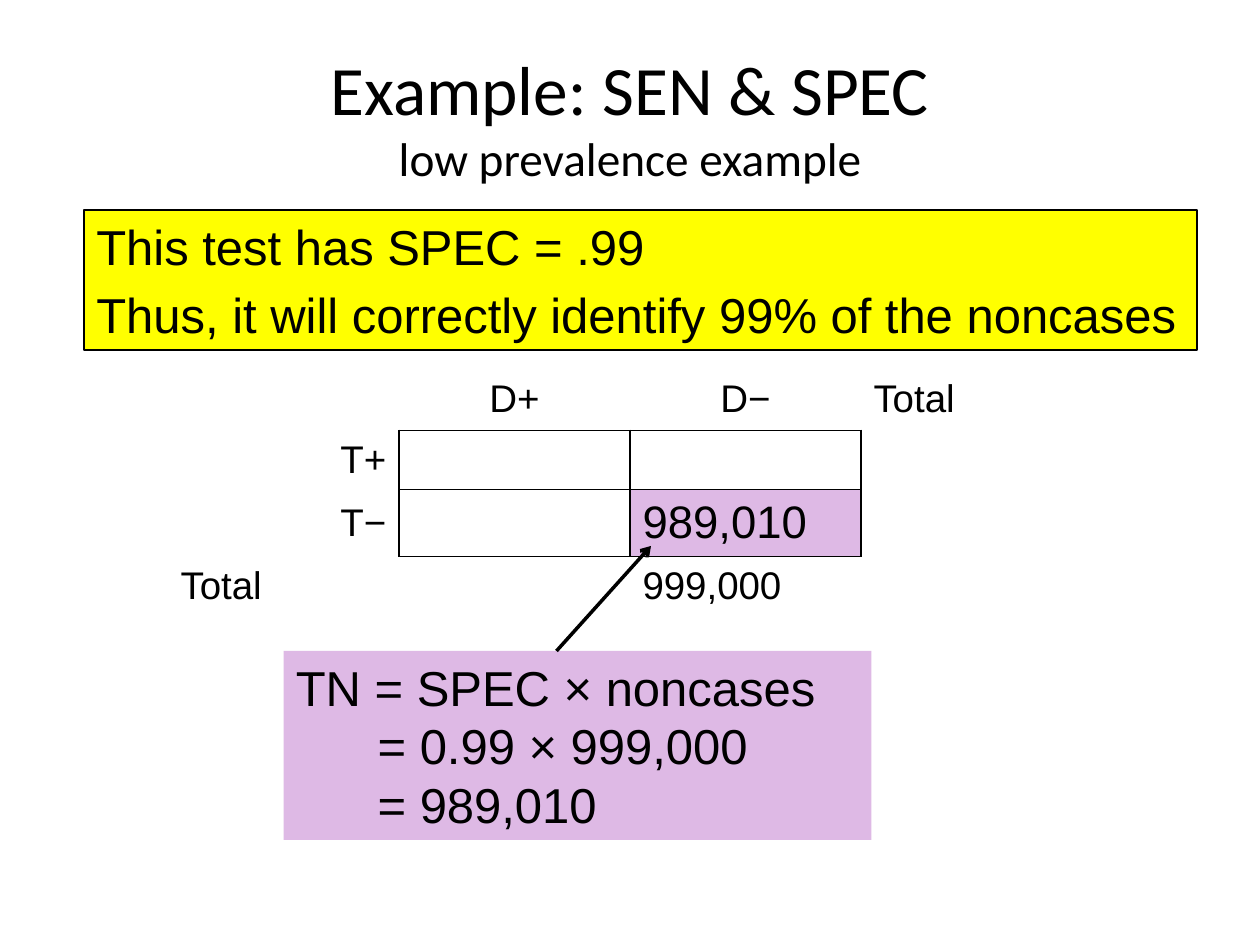
import pptx
import pptx.util
import pptx.dml.color
import pptx.enum.shapes
import pptx.enum.text
import pptx.oxml
import pptx.oxml.ns

Pt = pptx.util.Pt
RGBColor = pptx.dml.color.RGBColor
ALIGN = pptx.enum.text.PP_ALIGN
ANCHOR = pptx.enum.text.MSO_ANCHOR
SHAPE = pptx.enum.shapes.MSO_SHAPE
qn = pptx.oxml.ns.qn

BLACK = RGBColor(0, 0, 0)
WHITE = RGBColor(255, 255, 255)
LILAC = RGBColor(0xDE, 0xB9, 0xE5)
YELLOW = RGBColor(255, 255, 0)
NO_STYLE = "{2D5ABB26-0587-4C30-8999-92F81FD0307C}"


def add_box(left, top, width, height, color, lines, gap, anchor):
    """Add a filled rectangle with one left-aligned paragraph per line."""
    box = slide.shapes.add_shape(SHAPE.RECTANGLE, Pt(left), Pt(top), Pt(width), Pt(height))
    box.shadow.inherit = False
    box.fill.solid()
    box.fill.fore_color.rgb = color
    box.line.fill.background()
    frame = box.text_frame
    frame.word_wrap = True
    frame.vertical_anchor = anchor
    frame.text = "\n".join(lines)
    for paragraph in frame.paragraphs:
        paragraph.alignment = ALIGN.LEFT
        paragraph.space_before = Pt(gap)
        paragraph.font.name = "Arial"
        paragraph.font.size = Pt(28)
        paragraph.font.color.rgb = BLACK
    return box


def add_borders(cell, sides):
    properties = cell._tc.get_or_add_tcPr()
    for position, side in enumerate(sides):
        border = pptx.oxml.parse_xml(
            f'<a:ln{side} xmlns:a="http://schemas.openxmlformats.org/drawingml/2006/main" w="12700">'
            f'<a:solidFill><a:srgbClr val="{BLACK}"/></a:solidFill></a:ln{side}>')
        properties.insert(position, border)


presentation = pptx.Presentation()
presentation.slide_width = Pt(720)
presentation.slide_height = Pt(540)
slide = presentation.slides.add_slide(presentation.slide_layouts[5])

# Title
title = slide.shapes.title
title.left, title.top, title.width, title.height = Pt(36), Pt(21.6), Pt(648), Pt(90)
title.text_frame.vertical_anchor = ANCHOR.MIDDLE
heading = title.text_frame.paragraphs[0]
heading.alignment = ALIGN.CENTER
heading.font.name = "Calibri"
heading.font.color.rgb = BLACK
topic = heading.add_run()
topic.text = "Example: SEN & SPEC"
topic.font.size = Pt(39.6)
heading.add_line_break()
subtitle = heading.add_run()
subtitle.text = "low prevalence example"
subtitle.font.size = Pt(27)

# Two-by-two table with totals
counts = [
    ["", "D+", "D−", "Total"],
    ["T+", "", "", ""],
    ["T−", "", "989,010", ""],
    ["Total", "", "999,000", ""],
]
row_heights = [36, 33.8, 38.2, 33.8]
table = slide.shapes.add_table(4, 4, Pt(96), Pt(210), Pt(528), Pt(sum(row_heights))).table
table.first_row = table.horz_banding = False
table._tbl.tblPr.find(qn("a:tableStyleId")).text = NO_STYLE
for column in table.columns:
    column.width = Pt(132)
for r, (height, values) in enumerate(zip(row_heights, counts)):
    table.rows[r].height = Pt(height)
    for c, value in enumerate(values):
        cell = table.cell(r, c)
        cell.text = value
        cell.vertical_anchor = ANCHOR.MIDDLE
        true_negatives = (r, c) == (2, 2)
        paragraph = cell.text_frame.paragraphs[0]
        paragraph.font.name = "Arial"
        paragraph.font.size = Pt(26 if true_negatives else 22)
        paragraph.font.color.rgb = BLACK
        if value.startswith("D"):
            paragraph.alignment = ALIGN.CENTER
        elif value.startswith("T") and value != "Total":
            paragraph.alignment = ALIGN.RIGHT
        cell.fill.solid()
        cell.fill.fore_color.rgb = LILAC if true_negatives else WHITE
        if r in (1, 2) and c in (1, 2):
            add_borders(cell, "LRTB")

# Calculation of the true negatives
calculation = add_box(162, 372, 336, 108, LILAC,
                      ["TN = SPEC × noncases", "= 0.99 × 999,000", "= 989,010"],
                      0, ANCHOR.TOP)
for step in calculation.text_frame.paragraphs[1:]:
    step._p.get_or_add_pPr().set("marL", str(Pt(46.7)))

arrow = slide.shapes.add_connector(pptx.enum.shapes.MSO_CONNECTOR.STRAIGHT,
                                   Pt(318), Pt(372), Pt(372), Pt(312))
arrow.line.color.rgb = BLACK
arrow.line.width = Pt(2)
arrow_line = arrow.line._get_or_add_ln()
arrow_line.append(arrow_line.makeelement(qn("a:tailEnd"), {"type": "arrow"}))
arrow_properties = arrow._element.spPr
arrow_properties.append(arrow_properties.makeelement(qn("a:effectLst"), {}))

# Statement about the test
statement = add_box(48, 120, 636, 80, YELLOW,
                    ["This test has SPEC = .99",
                     "Thus, it will correctly identify 99% of the noncases"],
                    5, ANCHOR.MIDDLE)
statement.line.color.rgb = BLACK
statement.line.width = Pt(0.75)

presentation.save("out.pptx")
